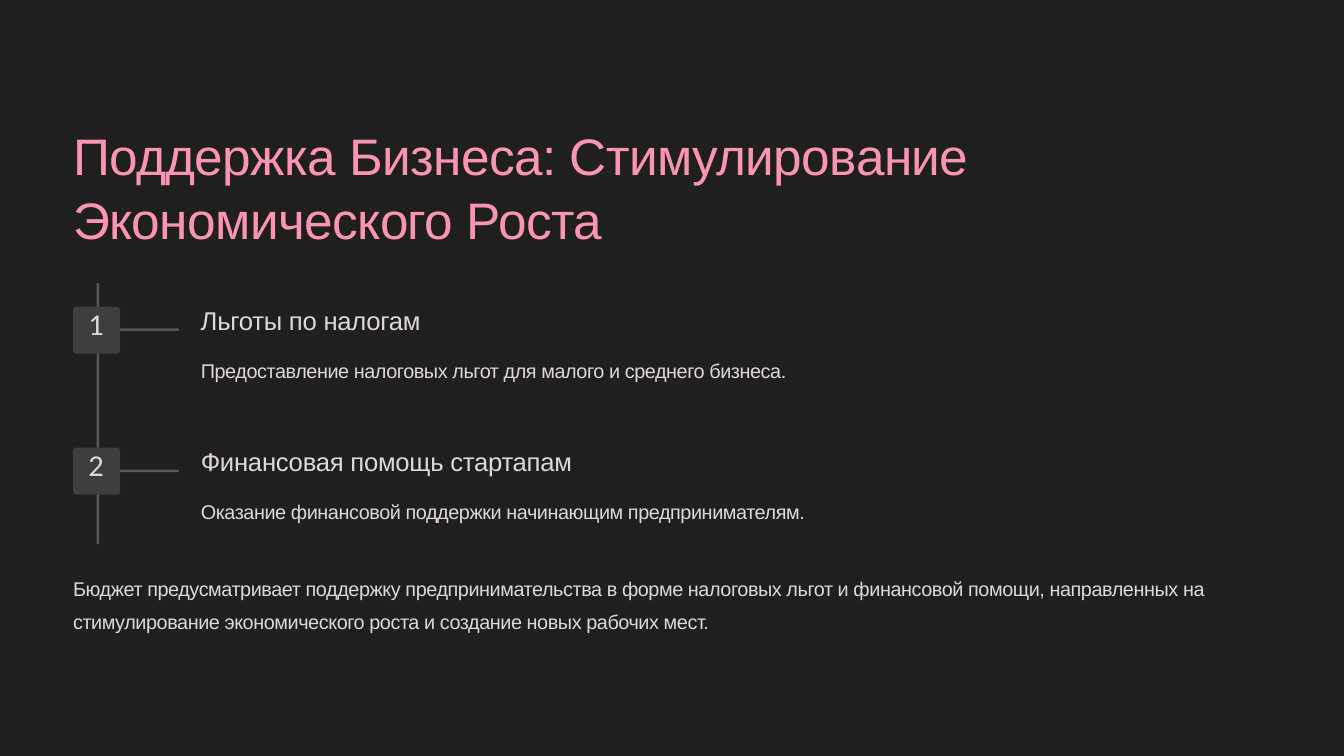
from dataclasses import dataclass

from pptx import Presentation
from pptx import util as u
from pptx.dml.color import RGBColor
from pptx.enum import shapes, text

Inches = u.Inches


@dataclass(frozen=True)
class Style:
    size: int
    lead: int
    space: float
    color: str = "E0D6DE"
    font: str = "Arial"


@dataclass(frozen=True)
class Theme:
    back: str = "1F1F1F"
    line: str = "575757"
    badge: str = "3E3E3E"
    title: Style = Style(44, 55, -0.5, "FA95AF")
    number: Style = Style(26, 26, -0.3, font="Calibri")
    head: Style = Style(22, 27, -0.2)
    body: Style = Style(17, 28, -0.4)


THEME = Theme()
LEFT, WIDTH = 0.87, 14.26
THICK = 0.03
STEPS = [
    ("Льготы по налогам", 2.7,
     "Предоставление налоговых льгот для малого и среднего бизнеса.", 7.12),
    ("Финансовая помощь стартапам", 4.52,
     "Оказание финансовой поддержки начинающим предпринимателям.", 7.35),
]


def place(shape, box):
    shape.left, shape.top, shape.width, shape.height = map(Inches, box)


def write(shape, words, style, align=text.PP_ALIGN.LEFT, wrap=False):
    frame = shape.text_frame
    frame.text = words
    frame.word_wrap = wrap
    frame.auto_size = text.MSO_AUTO_SIZE.NONE
    frame.vertical_anchor = text.MSO_ANCHOR.TOP
    frame.margin_left = frame.margin_right = 0
    frame.margin_top = frame.margin_bottom = 0
    para = frame.paragraphs[0]
    para.alignment = align
    para.line_spacing = u.Pt(style.lead)
    run = para.runs[0]
    run.font.name = style.font
    run.font.size = u.Pt(style.size)
    run.font.color.rgb = RGBColor.from_string(style.color)
    run._r.get_or_add_rPr().set("spc", str(round(style.space * 100)))


def add_text(slide, box, words, style, **opts):
    write(slide.shapes.add_textbox(*map(Inches, box)), words, style, **opts)


def add_block(slide, box, color, curve=0.5):
    block = slide.shapes.add_shape(
        shapes.MSO_SHAPE.ROUNDED_RECTANGLE, *map(Inches, box))
    block.adjustments[0] = curve
    block.shadow.inherit = False
    block.fill.solid()
    block.fill.fore_color.rgb = RGBColor.from_string(color)
    block.line.fill.background()


def add_title(slide, box, words):
    title = slide.shapes.title
    place(title, box)
    write(title, words, THEME.title, wrap=True)


def add_step(slide, left, top, number, step):
    head, head_width, body, body_width = step
    add_block(slide, (left + 0.52, top + 0.29, 0.74, THICK), THEME.line)
    add_block(slide, (left, top + 0.03, 0.56, 0.56), THEME.badge, 0.067)
    add_text(slide, (left + 0.17, top + 0.08, 0.21, 0.37), str(number),
             THEME.number, align=text.PP_ALIGN.CENTER)
    add_text(slide, (left + 1.52, top, head_width, 0.37), head, THEME.head)
    add_text(slide, (left + 1.52, top + 0.54, body_width, 0.36), body, THEME.body)


def add_timeline(slide, box, steps):
    left, top, _, height = box
    pitch = 1.68
    add_block(slide, (left + 0.28, top, THICK, height), THEME.line)
    for index, step in enumerate(steps):
        add_step(slide, left, top + 0.25 + index * pitch, index + 1, step)


def main():
    deck = Presentation()
    deck.slide_width, deck.slide_height = Inches(16), Inches(9)
    slide = deck.slides.add_slide(deck.slide_layouts[5])
    fill = slide.background.fill
    fill.solid()
    fill.fore_color.rgb = RGBColor.from_string(THEME.back)
    add_title(slide, (LEFT, 1.45, WIDTH, 1.51),
              "Поддержка Бизнеса: Стимулирование Экономического Роста")
    add_timeline(slide, (LEFT, 3.37, WIDTH, 3.11), STEPS)
    add_text(slide, (LEFT, 6.76, WIDTH, 0.75),
             "Бюджет предусматривает поддержку предпринимательства в форме "
             "налоговых льгот и финансовой помощи, направленных на "
             "стимулирование экономического роста и создание новых рабочих мест.",
             THEME.body, wrap=True)
    deck.save("out.pptx")


if __name__ == "__main__":
    main()
